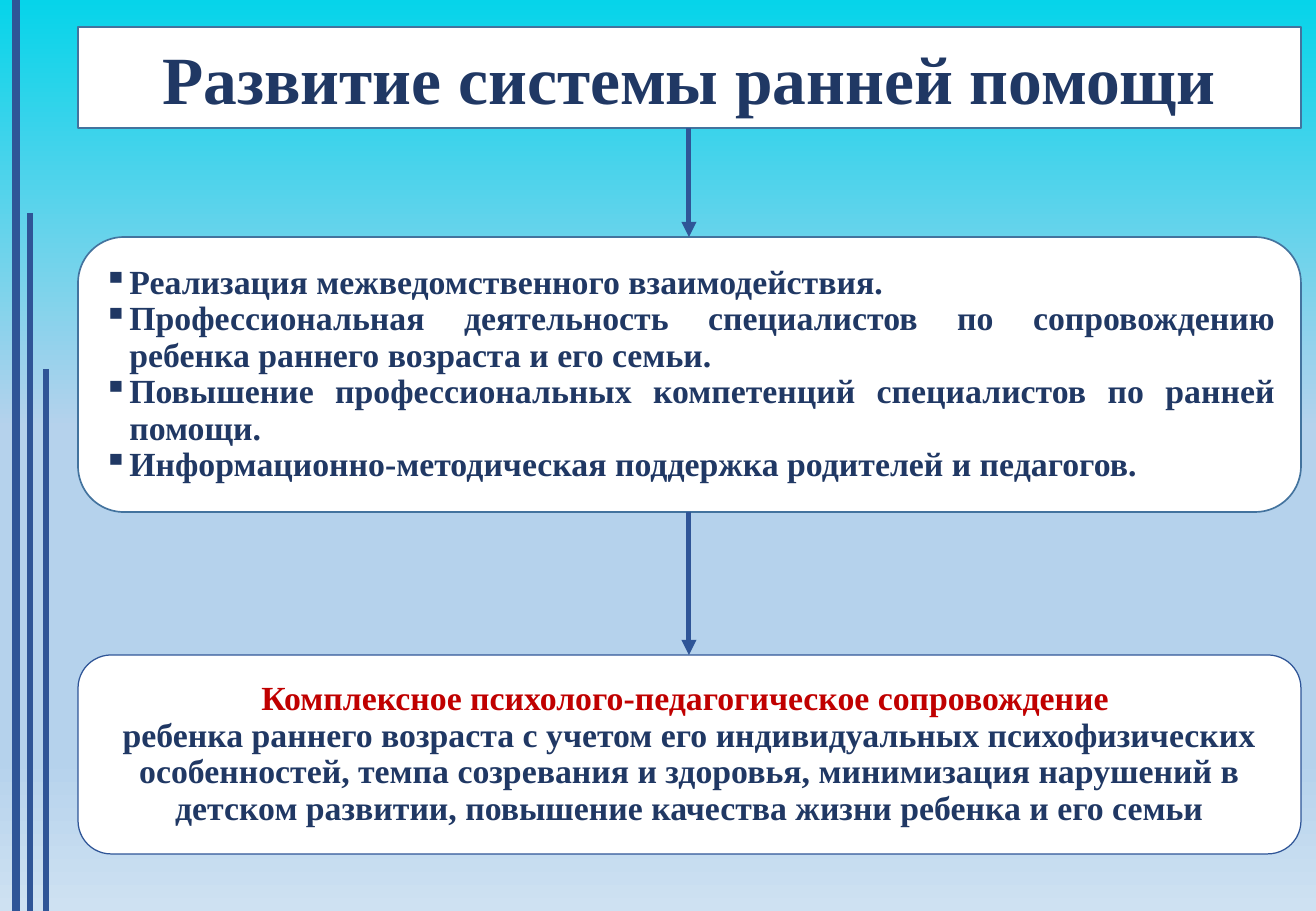
from lxml.etree import SubElement
from pptx import Presentation
from pptx.dml.color import RGBColor
from pptx.enum.shapes import MSO_CONNECTOR, MSO_SHAPE
from pptx.enum.text import MSO_ANCHOR, MSO_AUTO_SIZE, PP_ALIGN
from pptx.oxml.ns import qn
from pptx.util import Pt

PX = 7526  # EMU in one px
WIDTH, HEIGHT = 1316, 911
BOX_LEFT, BOX_WIDTH = 78, 1223
BULLET_INDENT = 26

WHITE = RGBColor(0xFF, 0xFF, 0xFF)
NAVY = RGBColor(0x20, 0x38, 0x64)
RED = RGBColor(0xC0, 0x00, 0x00)
BLUE = RGBColor(0x2F, 0x55, 0x97)
STEEL = RGBColor(0x43, 0x73, 0x9E)
SKY_STOPS = [
    (0, RGBColor(0x06, 0xD4, 0xEA)),
    (47, RGBColor(0xB5, 0xD2, 0xEC)),
    (83, RGBColor(0xB5, 0xD2, 0xEC)),
    (100, RGBColor(0xCE, 0xE1, 0xF2)),
]

TITLE = "Развитие системы ранней помощи"
MEASURES = [
    "Реализация межведомственного взаимодействия.",
    "Профессиональная деятельность специалистов по сопровождению ребенка раннего возраста и его семьи.",
    "Повышение профессиональных компетенций специалистов по ранней помощи.",
    "Информационно-методическая поддержка родителей и педагогов.",
]
SUPPORT = "Комплексное психолого-педагогическое сопровождение "
GOAL = (
    "ребенка раннего возраста с учетом его индивидуальных психофизических "
    "особенностей, темпа созревания и здоровья, минимизация нарушений в "
    "детском развитии, повышение качества жизни ребенка и его семьи"
)


def fill_box(box, outline, outline_width, size, align, spacing, lines):
    """Format a white box and write its (text, colour) lines."""
    box.fill.solid()
    box.fill.fore_color.rgb = WHITE
    box.line.color.rgb = outline
    box.line.width = Pt(outline_width)
    frame = box.text_frame
    frame.word_wrap = True
    frame.auto_size = MSO_AUTO_SIZE.NONE
    frame.vertical_anchor = MSO_ANCHOR.MIDDLE
    for index, (text, colour) in enumerate(lines):
        paragraph = frame.paragraphs[0] if index == 0 else frame.add_paragraph()
        paragraph.alignment = align
        paragraph.line_spacing = spacing
        run = paragraph.add_run()
        run.text = text
        font_format = {"name": "Times New Roman", "size": Pt(size), "bold": True}
        for attribute, value in font_format.items():
            setattr(run.font, attribute, value)
        run.font.color.rgb = colour


def add_line(x, top, bottom, width):
    line = slide.shapes.add_connector(
        MSO_CONNECTOR.STRAIGHT, x * PX, top * PX, x * PX, bottom * PX)
    line.line.color.rgb = BLUE
    line.line.width = Pt(width)
    SubElement(line._element.spPr, qn("a:effectLst"))
    return line


prs = Presentation()
prs.slide_width, prs.slide_height = WIDTH * PX, HEIGHT * PX
slide = prs.slides.add_slide(prs.slide_layouts[5])

# Background
sky = slide.background.fill
sky.gradient()
sky.gradient_angle = 270
stop_list = slide.background._cSld.find(".//" + qn("a:gsLst"))
for old_stop in list(stop_list):
    stop_list.remove(old_stop)
for percent, colour in SKY_STOPS:
    stop = SubElement(stop_list, qn("a:gs"), pos=str(percent * 1000))
    SubElement(stop, qn("a:srgbClr"), val=str(colour))

# Title
title = slide.shapes.title
title.left, title.top, title.width, title.height = (
    length * PX for length in (BOX_LEFT, 27, BOX_WIDTH, 101))
outline = SubElement(title._element.spPr, qn("a:prstGeom"), prst="roundRect")
SubElement(outline, qn("a:avLst"))
fill_box(title, STEEL, 1, 40, PP_ALIGN.CENTER, 1.0, [(TITLE, NAVY)])

# Measures and goal
measures, goal = [
    slide.shapes.add_shape(MSO_SHAPE.ROUNDED_RECTANGLE, BOX_LEFT * PX, top * PX,
                           BOX_WIDTH * PX, height * PX)
    for top, height in ((237, 275), (655, 199))
]
for box in (measures, goal):
    box.shadow.inherit = False
fill_box(measures, STEEL, 1, 20, PP_ALIGN.JUSTIFY, 0.9,
         [(text, NAVY) for text in MEASURES])
fill_box(goal, BLUE, 0.75, 20, PP_ALIGN.CENTER, 0.9,
         [(SUPPORT, RED), (GOAL, NAVY)])
for paragraph in measures.text_frame.paragraphs:
    properties = paragraph._p.get_or_add_pPr()
    properties.set("marL", str(BULLET_INDENT * PX))
    properties.set("indent", str(-BULLET_INDENT * PX))
    SubElement(properties, qn("a:buChar"), char="▪")

# Arrows between the boxes
for top, bottom in ((128, 237), (512, 655)):
    arrow = add_line(689, top, bottom, 3)
    SubElement(arrow.line._get_or_add_ln(), qn("a:tailEnd"), type="triangle")

# Stripes on the left edge
for x, top, width in ((16, 0, 4.5), (30, 213, 3), (46, 369, 3)):
    add_line(x, top, HEIGHT, width)

prs.save("out.pptx")
